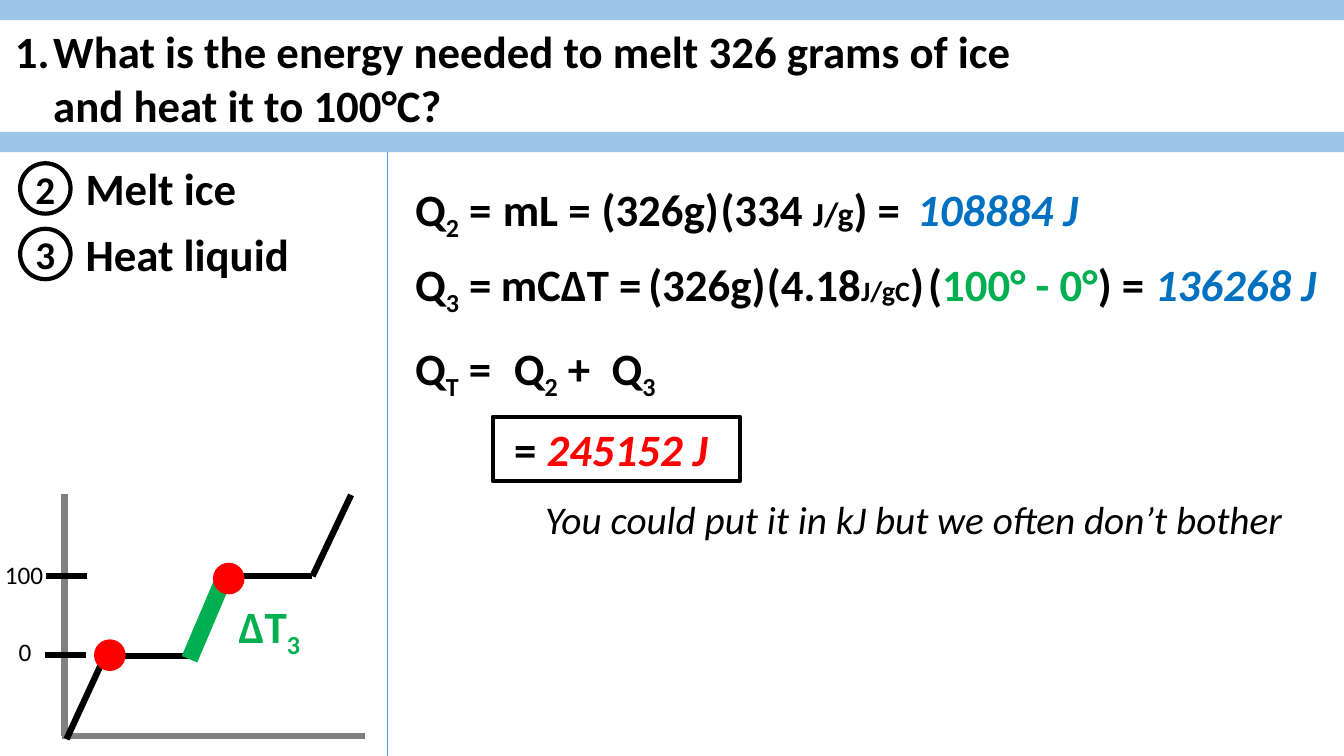
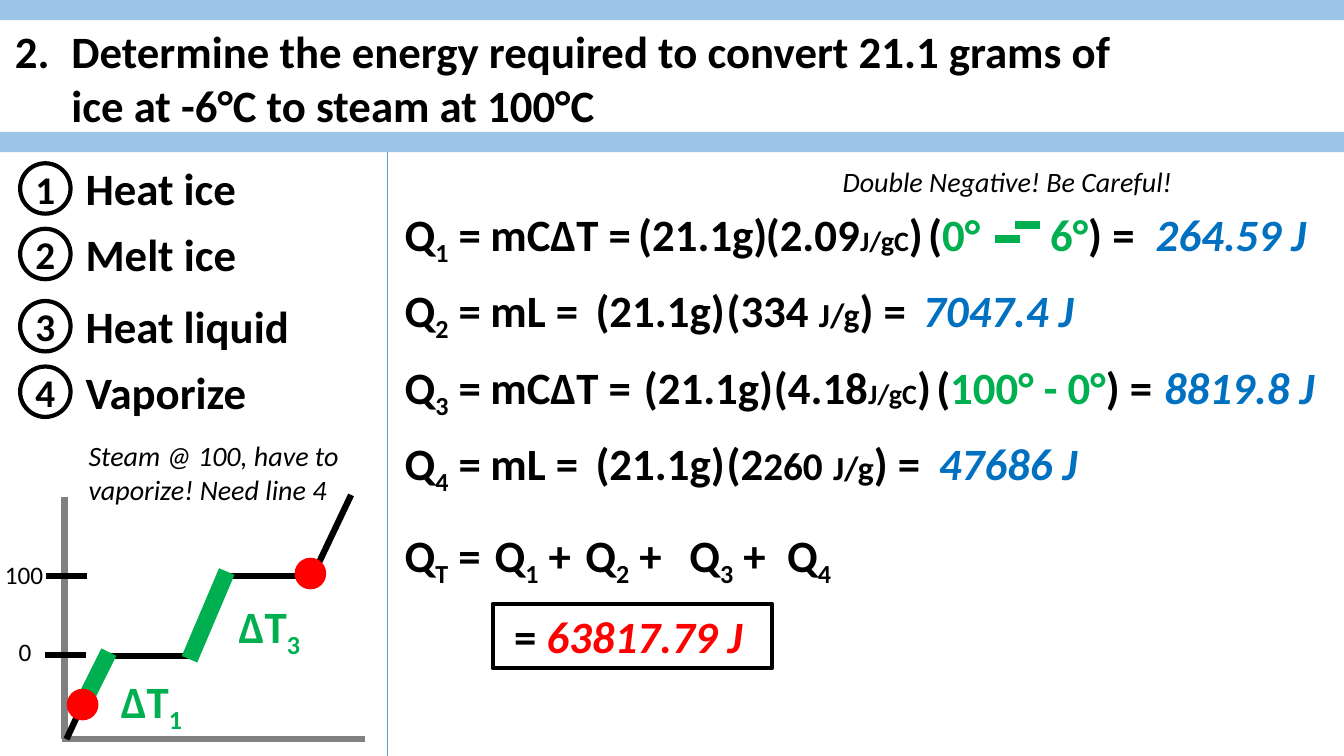
import dataclasses
import itertools

import lxml.etree
import pptx
import pptx.dml.color
import pptx.enum.shapes
import pptx.enum.text
import pptx.oxml.ns
import pptx.shapes.autoshape
import pptx.slide
import pptx.text.text
import pptx.util

WIDTH, HEIGHT = pptx.util.Inches(13.33), pptx.util.Inches(7.5)
COLUMNS, ROWS = 80, 45
FONT = "Calibri"
COLORS = {
    "band": "9DC3E6",
    "divider": "5B9BD5",
    "axis": "808080",
    "black": "000000",
    "white": "FFFFFF",
    "green": "00B050",
    "blue": "0070C0",
    "red": "FF0000",
}
ALIGN = pptx.enum.text.PP_ALIGN
SHAPE = pptx.enum.shapes.MSO_SHAPE
LINE_HEIGHT = 3.84
TERM_WIDTH = 15
CURVE = ((3.96, 44), (6.24, 39.06), (11.3, 39.06), (13.4, 34.3), (18.6, 34.3), (20.9, 29.46))
BOX_FORMAT = {"word_wrap": True, "vertical_anchor": pptx.enum.text.MSO_ANCHOR.TOP}
CIRCLE_FORMAT = {
    "word_wrap": False,
    "vertical_anchor": pptx.enum.text.MSO_ANCHOR.MIDDLE,
    "margin_left": 0,
    "margin_right": 0,
}
ANSWER_FORMAT = {
    "word_wrap": True,
    "vertical_anchor": pptx.enum.text.MSO_ANCHOR.MIDDLE,
    "margin_left": pptx.util.Inches(0.21),
}


@dataclasses.dataclass(frozen=True)
class Span:
    text: str
    size: int = 32
    color: str = "black"
    bold: bool = True
    italic: bool = False
    lowered: bool = False


@dataclasses.dataclass(frozen=True)
class Area:
    column: float
    row: float
    width: float
    height: float = LINE_HEIGHT


@dataclasses.dataclass(frozen=True)
class Label:
    area: Area
    spans: tuple[Span, ...]
    align: ALIGN = ALIGN.LEFT


@dataclasses.dataclass(frozen=True)
class Stroke:
    start: tuple[float, float]
    end: tuple[float, float]
    color: str = "black"
    weight: float = 4.5


@dataclasses.dataclass(frozen=True)
class Equation:
    row: float
    terms: tuple[tuple[float, tuple[Span, ...]], ...]


@dataclasses.dataclass(frozen=True)
class Problem:
    number: int
    title: tuple[str, str]
    indent: float
    steps: tuple[tuple[int, str], ...]
    equations: tuple[Equation, ...]
    answer: str
    answer_area: Area
    axis_base: float
    strokes: tuple[Stroke, ...]
    dots: tuple[tuple[float, float], ...]
    labels: tuple[Label, ...]


def across(columns: float) -> int:
    return round(WIDTH * columns / COLUMNS)


def down(rows: float) -> int:
    return round(HEIGHT * rows / ROWS)


def rgb(name: str) -> pptx.dml.color.RGBColor:
    return pptx.dml.color.RGBColor.from_string(COLORS[name])


def plain(text: str) -> tuple[Span, ...]:
    return (Span(text),)


def heat(index: str, tail: str = "") -> tuple[Span, ...]:
    return (Span("Q"), Span(index, lowered=True)) + ((Span(tail),) if tail else ())


def factor(value: str, unit: str, size: int, tail: str) -> tuple[Span, ...]:
    return Span(value), Span(unit, size), Span(tail)


def joules(value: str) -> tuple[Span, ...]:
    return (Span(value + " J", color="blue", italic=True),)


def remark(text: str, size: int = 20) -> tuple[Span, ...]:
    return (Span(text, size, bold=False, italic=True),)


def change(index: str, column: float, row: float) -> Label:
    spans = Span("∆T", color="green"), Span(index, color="green", lowered=True)
    return Label(Area(column, row, 5.5), spans)


def warm(*texts: str) -> tuple[Span, ...]:
    return tuple(Span(text, color="green" if "°" in text else "black") for text in texts)


def apply(target: object, formats: dict[str, object]) -> None:
    for name, value in formats.items():
        setattr(target, name, value)


def write(para: pptx.text.text._Paragraph, spans: tuple[Span, ...]) -> None:
    for span in spans:
        run = para.add_run()
        run.text = span.text
        formats = {
            "name": FONT,
            "size": pptx.util.Pt(span.size),
            "bold": span.bold,
            "italic": span.italic,
        }
        apply(run.font, formats)
        run.font.color.rgb = rgb(span.color)
        if span.lowered:
            run.font._element.set("baseline", "-25000")


def add_label(page: pptx.slide.Slide, label: Label) -> pptx.text.text._Paragraph:
    area = label.area
    box = page.shapes.add_textbox(
        across(area.column), down(area.row), across(area.width), down(area.height)
    )
    apply(box.text_frame, BOX_FORMAT)
    para = box.text_frame.paragraphs[0]
    para.alignment = label.align
    write(para, label.spans)
    return para


def add_figure(
    page: pptx.slide.Slide,
    kind: SHAPE,
    area: Area,
    fill: str | None,
    line: str | None = None,
    weight: float = 1,
) -> pptx.shapes.autoshape.Shape:
    figure = page.shapes.add_shape(
        kind, across(area.column), down(area.row), across(area.width), down(area.height)
    )
    figure.shadow.inherit = False
    if fill:
        figure.fill.solid()
        figure.fill.fore_color.rgb = rgb(fill)
    else:
        figure.fill.background()
    if line:
        figure.line.color.rgb = rgb(line)
        figure.line.width = pptx.util.Pt(weight)
    else:
        figure.line.fill.background()
    return figure


def add_stroke(page: pptx.slide.Slide, stroke: Stroke) -> None:
    (left, top), (right, bottom) = stroke.start, stroke.end
    line = page.shapes.add_connector(
        pptx.enum.shapes.MSO_CONNECTOR.STRAIGHT,
        across(left), down(top), across(right), down(bottom),
    )
    line.line.color.rgb = rgb(stroke.color)
    line.line.width = pptx.util.Pt(stroke.weight)
    lxml.etree.SubElement(line._element.spPr, pptx.oxml.ns.qn("a:effectLst"))


def add_title(page: pptx.slide.Slide, problem: Problem) -> None:
    for row in (0, 7.86):
        add_figure(page, SHAPE.RECTANGLE, Area(0, row, COLUMNS, 1.2), "band")
    first, second = problem.title
    para = add_label(page, Label(Area(0.3, 1.14, 78.8, 7.1), plain(first)))
    para.add_line_break()
    write(para, plain(second))
    indent = across(problem.indent)
    properties = para._p.get_or_add_pPr()
    properties.set("marL", str(indent))
    properties.set("indent", str(-indent))
    numbering = lxml.etree.SubElement(properties, pptx.oxml.ns.qn("a:buAutoNum"))
    numbering.set("type", "arabicPeriod")
    numbering.set("startAt", str(problem.number))


def add_steps(page: pptx.slide.Slide, problem: Problem) -> None:
    for row, (number, name) in zip((9.3, 13.2, 17.5, 21.4), problem.steps):
        add_label(page, Label(Area(4.5, row, 14), plain(name)))
        circle = add_figure(page, SHAPE.OVAL, Area(1.2, row + 0.42, 3, 3), "white", "black", 3)
        apply(circle.text_frame, CIRCLE_FORMAT)
        para = circle.text_frame.paragraphs[0]
        para.alignment = ALIGN.CENTER
        write(para, (Span(str(number), 28),))


def add_graph(page: pptx.slide.Slide, problem: Problem) -> None:
    base = problem.axis_base
    axes = (
        Stroke((3.84, base - 14.4), (3.84, base), "axis"),
        Stroke((21.7, base), (3.7, base), "axis"),
    )
    ticks = tuple(Stroke((left, row), (left + 2.4, row)) for left, row in ((2.7, 39), (2.76, 34.3)))
    curve = tuple(itertools.starmap(Stroke, itertools.pairwise(CURVE)))
    for stroke in axes + ticks + curve + problem.strokes:
        add_stroke(page, stroke)
    for text, row, width, align in (("100", 33, 4.6, ALIGN.LEFT), ("0", 37.6, 2.76, ALIGN.RIGHT)):
        add_label(page, Label(Area(-0.3, row, width, 2.4), (Span(text, 18, bold=False),), align))
    for column, row in problem.dots:
        add_figure(page, SHAPE.OVAL, Area(column, row, 1.8, 1.8), "red", "red")


def add_work(page: pptx.slide.Slide, problem: Problem) -> None:
    add_stroke(page, Stroke((23.04, 9.06), (23.04, ROWS), "divider", 0.5))
    for equation in problem.equations:
        for column, spans in equation.terms:
            width = min(TERM_WIDTH, COLUMNS - column)
            add_label(page, Label(Area(column, equation.row, width), spans))
    answer = add_figure(page, SHAPE.RECTANGLE, problem.answer_area, None, "black", 3)
    apply(answer.text_frame, ANSWER_FORMAT)
    para = answer.text_frame.paragraphs[0]
    para.alignment = ALIGN.LEFT
    write(para, (Span("= "), Span(problem.answer, color="red", italic=True)))


HEAT_LIQUID = Stroke((11.28, 39.24), (13.5, 34.02), "green", 12)
LIQUID_CHANGE = change("3", 13.62, 35.34)
LIQUID_RANGE = warm("(", "100° - 0°", ") =")
SECOND_ROWS = [12 + 4.55 * index for index in range(4)]

PROBLEMS = (
    Problem(
        1, ("What is the energy needed to melt 326 grams of ice", "and heat it to 100°C?"), 2.28,
        ((2, "Melt ice"), (3, "Heat liquid")),
        (
            Equation(10.5, ((24.12, heat("2", " =")), (29.34, plain("mL =")), (35.22, plain("(326g)")),
                            (42.3, factor("(334 ", "J/g", 24, ") =")), (54, joules("108884")))),
            Equation(15, ((24.12, heat("3", " =")), (29.22, plain("mC∆T =")), (38, plain("(326g)")),
                          (45.06, factor("(4.18", "J/gC", 20, ")")), (54.66, LIQUID_RANGE),
                          (68.16, joules("136268")))),
            Equation(20, ((24.12, heat("T", " =")), (30, heat("2", " +")), (35.82, heat("3")))),
        ),
        "245152 J", Area(29.34, 24.8, 14.7), 43.8,
        (HEAT_LIQUID,), ((5.64, 38.1), (12.72, 33.54)),
        (LIQUID_CHANGE,
         Label(Area(31.86, 29.16, 47.2), remark("You could put it in kJ but we often don’t bother", 28))),
    ),
    Problem(
        2, ("Determine the energy required to convert 21.1 grams of", "ice at -6°C to steam at 100°C"), 3.36,
        ((1, "Heat ice"), (2, "Melt ice"), (3, "Heat liquid"), (4, "Vaporize")),
        (
            Equation(SECOND_ROWS[0], ((23.5, heat("1", " =")), (28.6, plain("mC∆T =")), (37.4, plain("(21.1g)")),
                                      (45, factor("(2.09", "J/gC", 20, ")")), (54.66, warm("(", "0°")),
                                      (61.92, warm("6°", ") =")), (68.2, joules("264.59")))),
            Equation(SECOND_ROWS[1], ((23.5, heat("2", " =")), (28.6, plain("mL =")), (34.86, plain("(21.1g)")),
                                      (42.66, factor("(334 ", "J/g", 24, ") =")), (54.36, joules("7047.4")))),
            Equation(SECOND_ROWS[2], ((23.5, heat("3", " =")), (28.6, plain("mC∆T =")), (37.74, plain("(21.1g)")),
                                      (45.48, factor("(4.18", "J/gC", 20, ")")), (55.14, LIQUID_RANGE),
                                      (68.7, joules("8819.8")))),
            Equation(SECOND_ROWS[3], ((23.5, heat("4", " =")), (28.6, plain("mL =")), (34.86, plain("(21.1g)")),
                                      (42.66, (Span("(2"), Span("260", 28), *factor(" ", "J/g", 24, ") ="))),
                                      (55.3, joules("47686")))),
            Equation(31.1, ((23.5, heat("T", " =")), (28.86, heat("1", " +")), (34.26, heat("2", " +")),
                            (40.44, heat("3", " +")), (46.26, heat("4")))),
        ),
        "63817.79 J", Area(29.34, 35.94, 16.62), 44,
        (HEAT_LIQUID, Stroke((4.98, 41.82), (6.48, 38.82), "green", 12),
         Stroke((60.42, 13.38), (61.92, 13.38), "green", 6), Stroke((59.22, 14.22), (60.72, 14.22), "green", 6)),
        ((4.02, 41.04), (17.58, 33.24)),
        (LIQUID_CHANGE, change("1", 6.6, 39.78),
         Label(Area(4.68, 25.8, 16.26, 4.6), remark("Steam @ 100, have to vaporize! Need line 4")),
         Label(Area(48.84, 9.48, 22.26, 2.6), remark("Double Negative! Be Careful!"), ALIGN.CENTER)),
    ),
)


def main() -> None:
    deck = pptx.Presentation()
    apply(deck, {"slide_width": WIDTH, "slide_height": HEIGHT})
    for problem in PROBLEMS:
        page = deck.slides.add_slide(deck.slide_layouts[6])
        for draw in (add_title, add_steps, add_graph, add_work):
            draw(page, problem)
        for label in problem.labels:
            add_label(page, label)
    deck.save("out.pptx")


if __name__ == "__main__":
    main()
